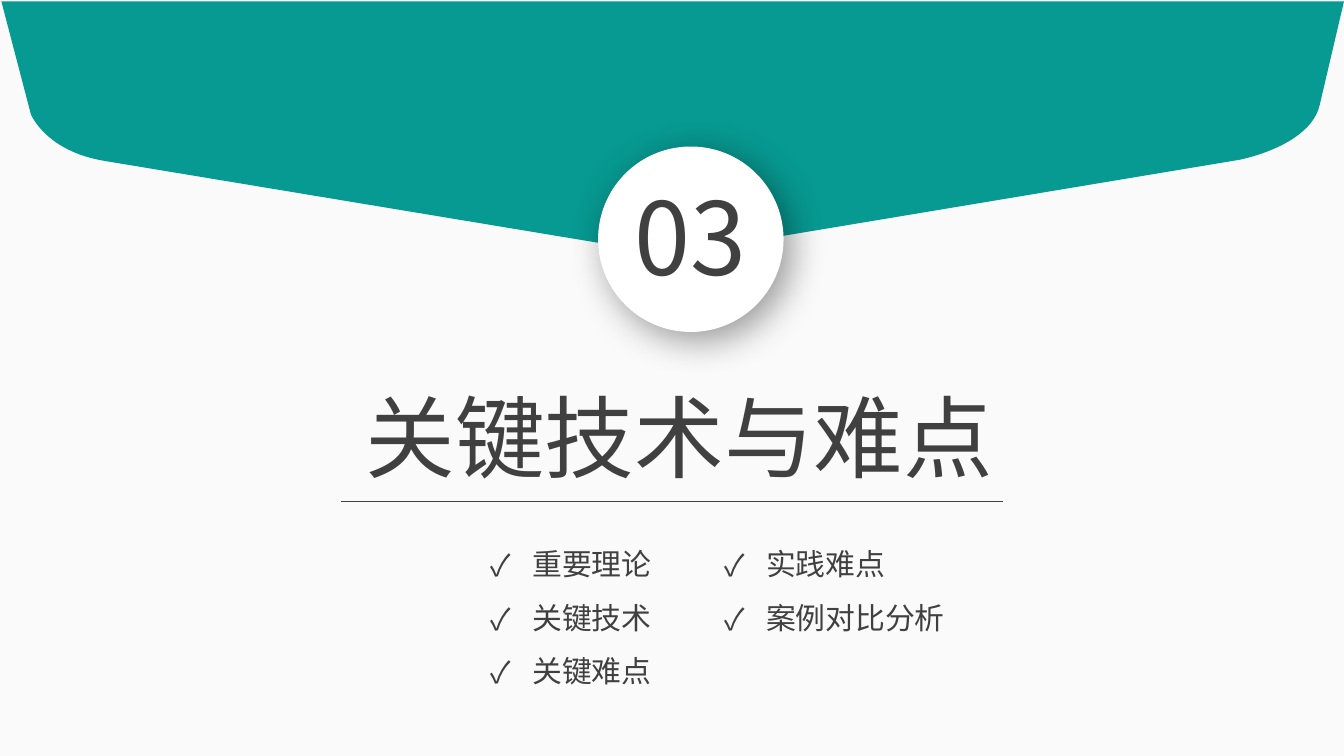
from lxml import etree
from pptx import Presentation
from pptx.dml.color import RGBColor
from pptx.enum.shapes import MSO_CONNECTOR, MSO_SHAPE
from pptx.enum.text import MSO_ANCHOR, MSO_AUTO_SIZE, PP_ALIGN
from pptx.oxml.ns import qn
from pptx.util import Inches, Pt

STRAIGHT = MSO_CONNECTOR.STRAIGHT
OVAL = MSO_SHAPE.OVAL
TOP = MSO_ANCHOR.TOP
GROW = MSO_AUTO_SIZE.SHAPE_TO_FIT_TEXT
CENTER, LEFT = PP_ALIGN.CENTER, PP_ALIGN.LEFT

WIDTH = 10
HEIGHT = WIDTH * 9 / 16
FONT = "Noto Sans CJK SC"
TEAL, WHITE, DARK, PAPER = "079A92", "FFFFFF", "404040", "FAFAFA"
TITLE = "关键技术与难点"
TOPIC_COLUMNS = [
    (1.7, ["重要理论", "关键技术", "关键难点"]),
    (2.17, ["实践难点", "案例对比分析"]),
]
TOPIC_LEFT, TOPIC_TOP, TOPIC_STEP = 3.55, 3.88, 1.74
TOPIC_LINE = 28.7
INDENT = Pt(22.5)


def color(value):
    return RGBColor.from_string(value)


def fill_shape(shape, value):
    shape.shadow.inherit = False
    shape.fill.solid()
    shape.fill.fore_color.rgb = color(value)
    shape.line.fill.background()


def curve(start, control, end, steps=24):
    """Points of a cubic curve whose first control point is its start."""
    points = []
    for step in range(steps + 1):
        t = step / steps
        weights = ((1 - t) ** 3 + 3 * t * (1 - t) ** 2, 3 * t ** 2 * (1 - t), t ** 3)
        points.append(tuple(
            sum(weight * value for weight, value in zip(weights, values))
            for values in zip(start, control, end)
        ))
    return points


def add_banner(slide):
    outline = [
        (0.01, 0.01),
        *curve((0.23, 0.85), (0.34, 1.13), (0.79, 1.2)),
        *curve((4.53, 1.82), (4.95, 1.9), (5.44, 1.82)),
        *curve((9.22, 1.19), (9.75, 1.09), (9.82, 0.78)),
        (WIDTH, 0.01),
    ]
    points = [(Inches(x), Inches(y)) for x, y in outline]
    builder = slide.shapes.build_freeform(*points[0])
    builder.add_line_segments(points[1:], close=True)
    fill_shape(builder.convert_to_shape(), TEAL)


def add_shadow(shape, alpha, blur, distance, angle):
    effects = shape._element.spPr.find(qn("a:effectLst"))
    shadow = etree.SubElement(
        effects, qn("a:outerShdw"), blurRad=str(Pt(blur)), dist=str(Pt(distance)),
        dir=str(angle * 60000), algn="tl", rotWithShape="0",
    )
    black = etree.SubElement(shadow, qn("a:srgbClr"), val="000000")
    etree.SubElement(black, qn("a:alpha"), val=str(alpha * 1000))


def add_badge(slide):
    box = [Inches(value) for value in (4.45, 1.09, 1.38, 1.38)]
    badge = slide.shapes.add_shape(OVAL, *box)
    fill_shape(badge, WHITE)
    add_shadow(badge, alpha=40, blur=20, distance=6, angle=45)


def add_check_bullet(paragraph):
    properties = paragraph._p.get_or_add_pPr()
    properties.set("marL", str(INDENT))
    properties.set("indent", str(-INDENT))
    etree.SubElement(properties, qn("a:buFont"), typeface=FONT)
    etree.SubElement(properties, qn("a:buChar"), char="✓")


def write_text(shape, lines, size, line_height, alignment=CENTER, checked=False):
    frame = shape.text_frame
    frame.word_wrap = True
    frame.auto_size = GROW
    frame.vertical_anchor = TOP
    frame.text = "\n".join(lines)
    for paragraph in frame.paragraphs:
        paragraph.alignment = alignment
        paragraph.line_spacing = Pt(line_height)
        paragraph.space_before = Pt(0)
        if checked:
            add_check_bullet(paragraph)
        font = paragraph.font
        font.size = Pt(size)
        font.name = FONT
        font.color.rgb = color(DARK)
        defaults = paragraph._p.pPr.find(qn("a:defRPr"))
        etree.SubElement(defaults, qn("a:ea"), typeface=FONT)


def add_text(slide, left, top, width, height, *text, **style):
    box = [Inches(value) for value in (left, top, width, height)]
    write_text(slide.shapes.add_textbox(*box), *text, **style)


def place_title(slide):
    title = slide.shapes.title
    title.left, title.top = Inches(2.11), Inches(2.8)
    title.width, title.height = Inches(5.89), Inches(0.91)
    write_text(title, [TITLE], 48, 57)


def add_rule(slide, margin, y):
    rule = slide.shapes.add_connector(
        STRAIGHT, Inches(margin), Inches(y), Inches(WIDTH - margin), Inches(y))
    rule.line.color.rgb = color(DARK)
    rule.line.width = Pt(0.5)
    etree.SubElement(rule._element.spPr, qn("a:effectLst"))


def add_topics(slide):
    for column, (width, topics) in enumerate(TOPIC_COLUMNS):
        height = 0.1 + len(topics) * TOPIC_LINE / 72
        add_text(slide, TOPIC_LEFT + column * TOPIC_STEP, TOPIC_TOP, width, height,
                 topics, 16, TOPIC_LINE, alignment=LEFT, checked=True)


def main():
    presentation = Presentation()
    presentation.slide_width = Inches(WIDTH)
    presentation.slide_height = Inches(HEIGHT)
    slide = presentation.slides.add_slide(presentation.slide_layouts[5])
    slide.background.fill.solid()
    slide.background.fill.fore_color.rgb = color(PAPER)

    add_banner(slide)
    add_badge(slide)
    add_text(slide, 4.52, 1.25, 1.23, 1.01, ["03"], 54, 65)
    place_title(slide)
    add_rule(slide, 2.54, 3.73)
    add_topics(slide)
    presentation.save("out.pptx")


if __name__ == "__main__":
    main()
